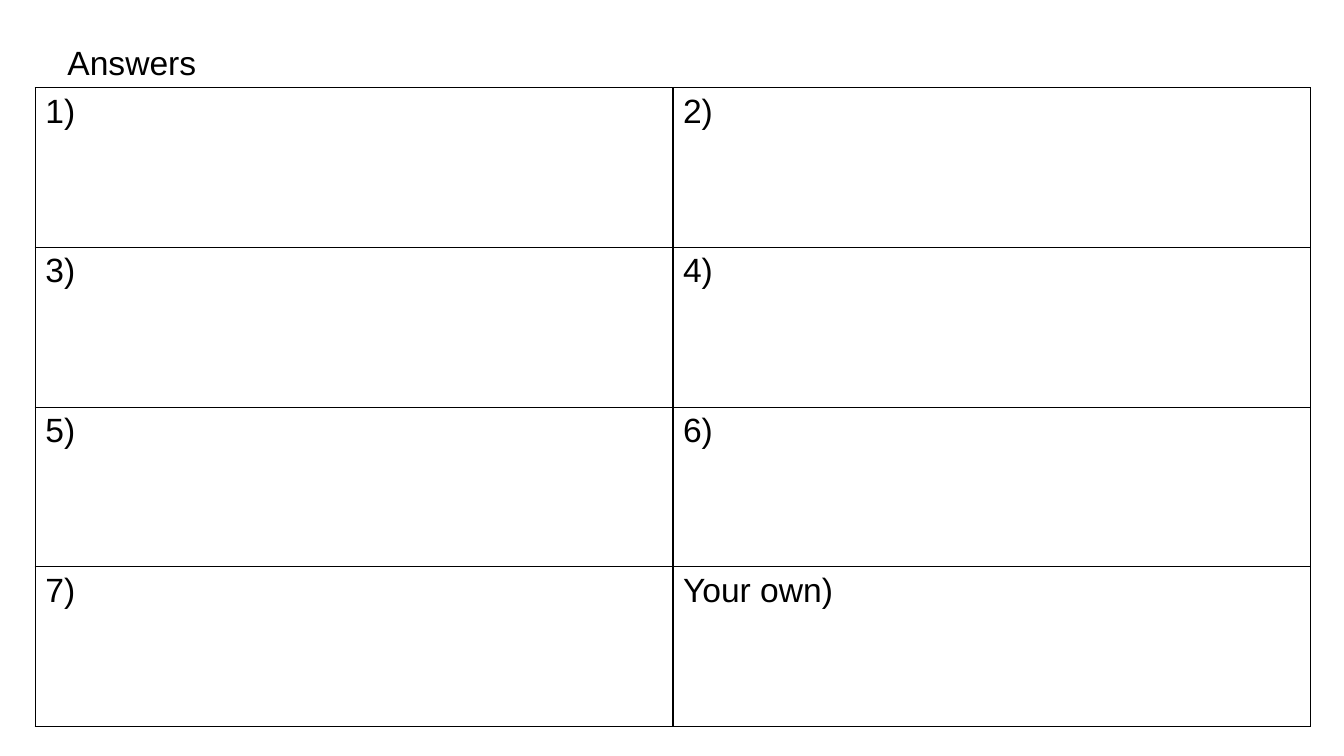
from dataclasses import dataclass

from lxml.etree import SubElement
from pptx import Presentation
from pptx.dml.color import RGBColor
from pptx.enum.text import MSO_AUTO_SIZE
from pptx.oxml.ns import qn
from pptx.slide import Slide
from pptx.table import _Cell
from pptx.text.text import TextFrame
from pptx.util import Cm, Pt


@dataclass(frozen=True)
class Theme:
    font: str = "Arial"
    text_size: Pt = Pt(24)
    ink: RGBColor = RGBColor(0, 0, 0)
    paper: RGBColor = RGBColor(255, 255, 255)
    border_width: Pt = Pt(1)


@dataclass(frozen=True)
class AnswerCell:
    row: int
    column: int
    label: str


THEME = Theme()
COLUMN_COUNT = 2
LABELS = [f"{number})" for number in range(1, 8)] + ["Your own)"]
ANSWERS = [
    AnswerCell(*divmod(index, COLUMN_COUNT), label)
    for index, label in enumerate(LABELS)
]


def write_text(frame: TextFrame, text: str) -> None:
    span = frame.paragraphs[0].add_run()
    span.text = text
    span.font.name = THEME.font
    span.font.size = THEME.text_size
    span.font.color.rgb = THEME.ink


def draw_borders(cell: _Cell) -> None:
    properties = cell._tc.get_or_add_tcPr()
    for position, side in enumerate(("lnL", "lnR", "lnT", "lnB")):
        line = SubElement(properties, qn(f"a:{side}"), w=str(THEME.border_width))
        fill = SubElement(line, qn("a:solidFill"))
        SubElement(fill, qn("a:srgbClr"), val=str(THEME.ink))
        properties.insert(position, line)  # borders must precede the cell fill


def add_heading(page: Slide) -> None:
    box = page.shapes.add_textbox(Cm(1.45), Cm(0.94), Cm(3.78), Cm(1.27))
    box.text_frame.word_wrap = False
    box.text_frame.auto_size = MSO_AUTO_SIZE.SHAPE_TO_FIT_TEXT
    write_text(box.text_frame, "Answers")


def add_answer_grid(page: Slide) -> None:
    row_count = len(ANSWERS) // COLUMN_COUNT
    grid = page.shapes.add_table(
        row_count, COLUMN_COUNT, Cm(0.89), Cm(2.21), Cm(32.14), Cm(16.1)
    ).table
    grid.first_row = False
    grid.horz_banding = False
    for answer in ANSWERS:
        cell = grid.cell(answer.row, answer.column)
        cell.fill.solid()
        cell.fill.fore_color.rgb = THEME.paper
        draw_borders(cell)
        write_text(cell.text_frame, answer.label)


def main() -> None:
    deck = Presentation()
    deck.slide_width, deck.slide_height = Cm(33.87), Cm(19.05)
    page = deck.slides.add_slide(deck.slide_layouts[6])
    add_answer_grid(page)
    add_heading(page)
    deck.save("out.pptx")


if __name__ == "__main__":
    main()
